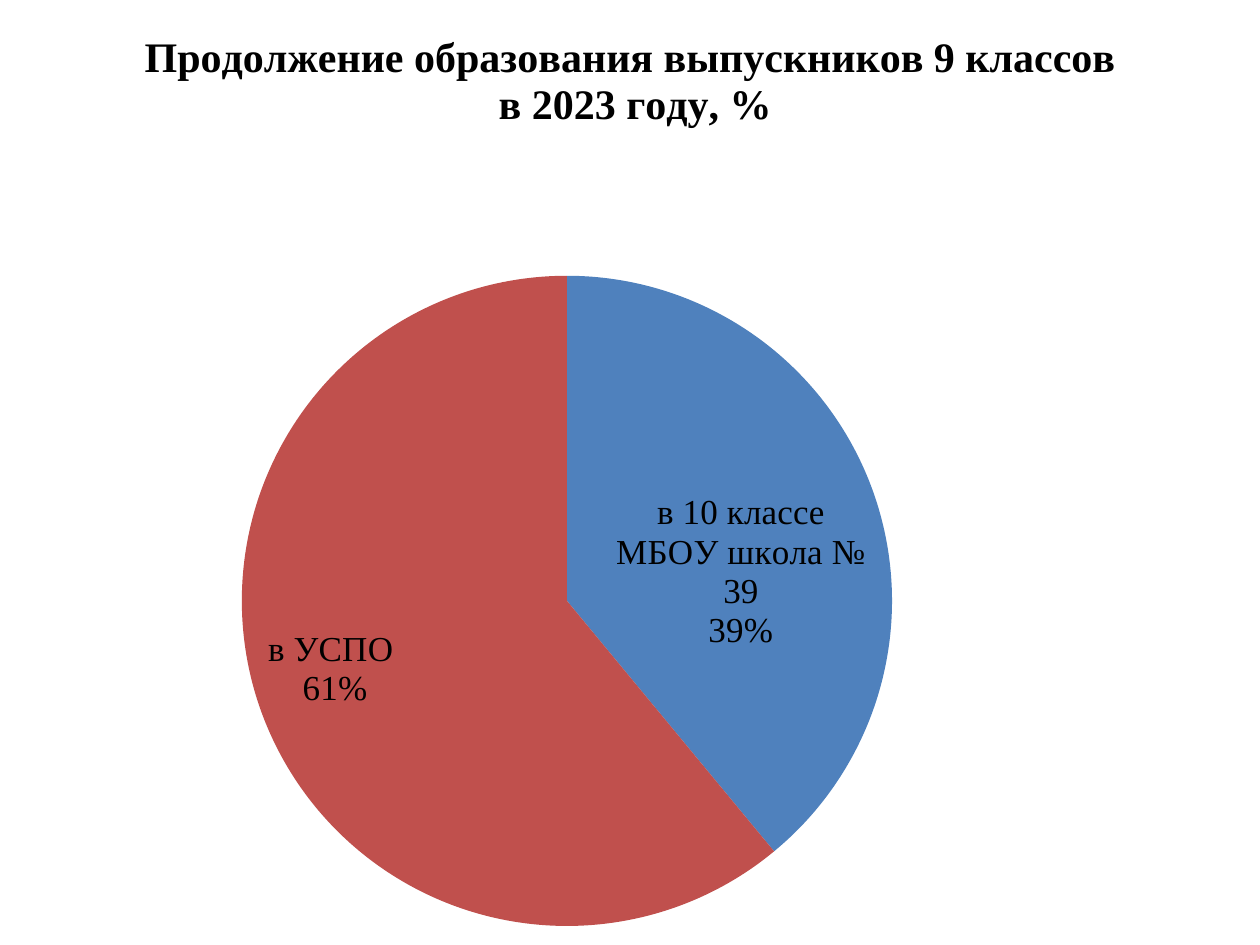
from lxml import etree
from pptx import Presentation
from pptx.chart.data import CategoryChartData
from pptx.dml.color import RGBColor
from pptx.enum.chart import XL_CHART_TYPE, XL_LABEL_POSITION
from pptx.oxml.ns import qn
from pptx.util import Inches, Pt

PIE = XL_CHART_TYPE.PIE
INSIDE_END = XL_LABEL_POSITION.INSIDE_END

FONT = "Times New Roman"
BLACK = "000000"
BLANK_LAYOUT = 6
TITLE_LINES = ["Продолжение образования выпускников 9 классов", " в 2023 году, %"]
# category, percent, colour
DESTINATIONS = [
    ("в 10 классе МБОУ школа № 39", 39, "4F81BD"),
    ("в УСПО ", 61, "C0504D"),
]
PLOT_AREA = {"x": 0.19, "y": 0.29, "w": 0.52, "h": 0.69}


def colour(hex_value):
    return RGBColor.from_string(hex_value)


def format_font(font, size, bold=False):
    font.name = FONT
    font.size = Pt(size)
    font.bold = bold
    font.color.rgb = colour(BLACK)


def add_chart_title(chart, lines):
    chart.has_title = True
    chart.chart_title.include_in_layout = False
    frame = chart.chart_title.text_frame
    for index, line in enumerate(lines):
        paragraph = frame.add_paragraph() if index else frame.paragraphs[0]
        run = paragraph.add_run()
        run.text = line
        format_font(run.font, 24, bold=True)


def place_plot_area(chart, fractions):
    """Fix the inner plot area as fractions of the chart's size."""
    plot_area = chart.element.find(".//" + qn("c:plotArea"))
    layout = plot_area.find(qn("c:layout"))
    if layout is None:
        layout = etree.Element(qn("c:layout"))
        plot_area.insert(0, layout)
    manual = etree.SubElement(layout, qn("c:manualLayout"))
    settings = {"layoutTarget": "inner", "xMode": "edge", "yMode": "edge", **fractions}
    for name, value in settings.items():
        etree.SubElement(manual, qn(f"c:{name}")).set("val", str(value))


def format_labels(plot):
    plot.has_data_labels = True
    labels = plot.data_labels
    labels.show_category_name = True
    labels.show_percentage = True
    labels.show_value = False
    labels.position = INSIDE_END
    format_font(labels.font, 20)


def add_pie(slide):
    data = CategoryChartData()
    data.categories = [name for name, _, _ in DESTINATIONS]
    data.add_series("Series 1", [percent for _, percent, _ in DESTINATIONS])
    chart = slide.shapes.add_chart(
        PIE, Inches(0), Inches(0.02), Inches(10), Inches(7.48), data
    ).chart
    format_font(chart.font, 20)
    chart.has_legend = False
    add_chart_title(chart, TITLE_LINES)
    place_plot_area(chart, PLOT_AREA)
    plot = chart.plots[0]
    plot.vary_by_categories = True
    format_labels(plot)
    for index, (_, _, fill) in enumerate(DESTINATIONS):
        point_format = plot.series[0].points[index].format
        point_format.fill.solid()
        point_format.fill.fore_color.rgb = colour(fill)
        point_format.line.fill.background()


def main():
    presentation = Presentation()
    presentation.slide_width = Inches(10)
    presentation.slide_height = Inches(7.5)
    slide = presentation.slides.add_slide(presentation.slide_layouts[BLANK_LAYOUT])
    add_pie(slide)
    presentation.save("out.pptx")


if __name__ == "__main__":
    main()
